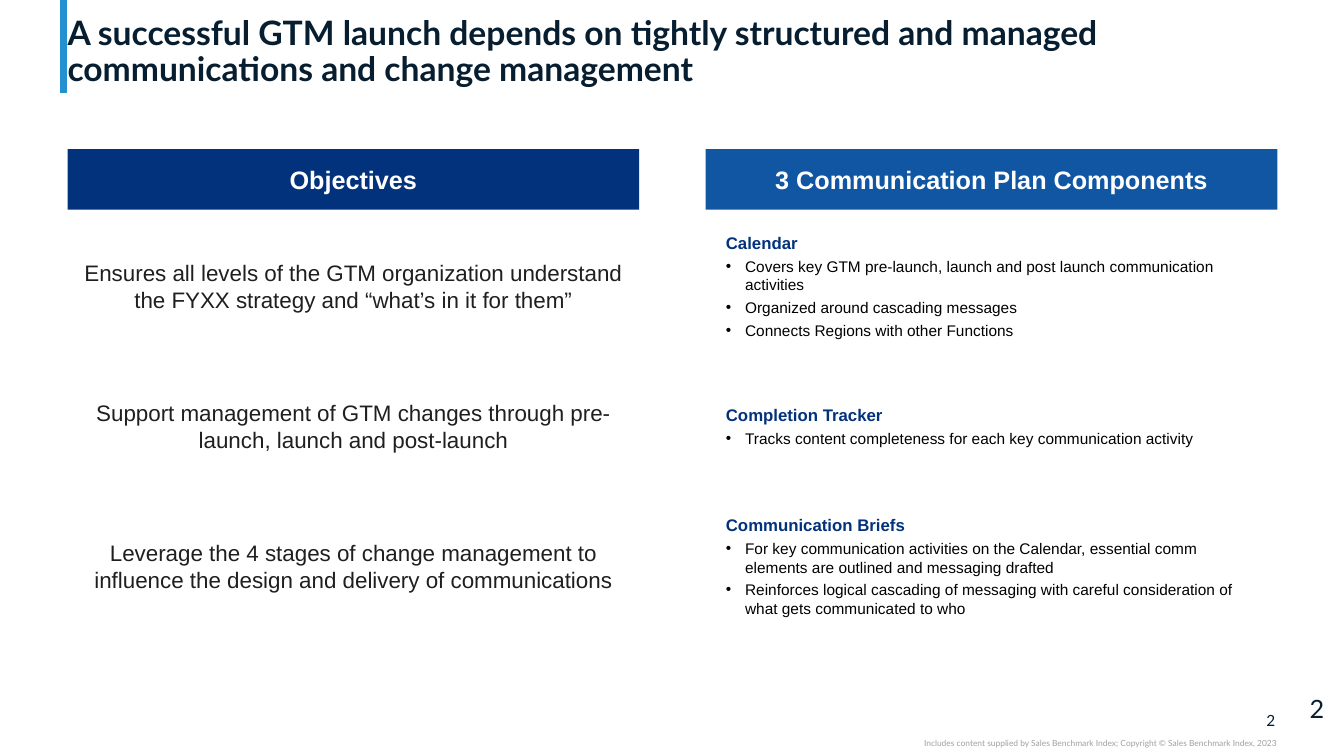
from lxml.etree import SubElement
from pptx import Presentation
from pptx.dml.color import RGBColor
from pptx.enum.shapes import MSO_CONNECTOR, MSO_SHAPE
from pptx.enum.text import MSO_ANCHOR, MSO_AUTO_SIZE, PP_ALIGN
from pptx.oxml.ns import qn
from pptx.util import Inches, Pt

NAVY, BLUE, INK, WHITE = "03327C", "1156A3", "071E31", "FFFFFF"


def style(paragraph, size, color, name="Arial", bold=False, align=PP_ALIGN.LEFT):
    paragraph.alignment = align
    paragraph.font.size = Pt(size)
    paragraph.font.name = name
    paragraph.font.bold = bold
    paragraph.font.color.rgb = RGBColor.from_string(color)


def add_box(left, top, height, fill, side_inset=0.1):
    shape = slide.shapes.add_shape(
        MSO_SHAPE.RECTANGLE, Inches(left), Inches(top), Inches(5.67), Inches(height))
    shape.shadow.inherit = False
    shape.fill.solid()
    shape.fill.fore_color.rgb = RGBColor.from_string(fill)
    shape.line.fill.background()
    frame = shape.text_frame
    frame.word_wrap = True
    frame.vertical_anchor = MSO_ANCHOR.MIDDLE
    frame.margin_left = frame.margin_right = Inches(side_inset)
    return frame


presentation = Presentation()
presentation.slide_width = Inches(13.33)
presentation.slide_height = Inches(7.5)
slide = presentation.slides.add_slide(presentation.slide_layouts[5])

accent = slide.shapes.add_connector(
    MSO_CONNECTOR.STRAIGHT, Inches(0.63), Inches(0), Inches(0.63), Inches(0.92))
accent.line.color.rgb = RGBColor.from_string("2391CF")
accent.line.width = Pt(5)
SubElement(accent.element.spPr, qn("a:effectLst"))

title = slide.shapes.title
title.left, title.top = Inches(0.67), Inches(0.04)
title.width, title.height = Inches(11.99), Inches(0.84)
title.text = ("A successful GTM launch depends on tightly structured and managed "
              "communications and change management")
frame = title.text_frame
frame.auto_size = MSO_AUTO_SIZE.NONE
frame.word_wrap = True
frame.vertical_anchor = MSO_ANCHOR.BOTTOM
frame.margin_left = frame.margin_top = frame.margin_right = frame.margin_bottom = 0
frame.paragraphs[0].line_spacing = 0.9
style(frame.paragraphs[0], 24, INK, "Lato", True)

copyright_line = ("Includes content supplied by Sales Benchmark Index; "
                  "Copyright © Sales Benchmark Index, 2023")
footers = [
    ("2", 12.32, 7.05, 0.33, 0.19, 11, INK, PP_ALIGN.RIGHT, MSO_ANCHOR.MIDDLE),
    (copyright_line, 7.5, 7.32, 5.16, 0.1, 6, "A0A0A0", PP_ALIGN.RIGHT, MSO_ANCHOR.TOP),
    ("2", 12.99, 6.93, 0.34, 0.2, 18, INK, PP_ALIGN.LEFT, MSO_ANCHOR.MIDDLE),
]
for text, left, top, width, height, size, color, align, anchor in footers:
    shape = slide.shapes.add_textbox(Inches(left), Inches(top), Inches(width), Inches(height))
    frame = shape.text_frame
    frame.text = text
    frame.word_wrap = True
    frame.vertical_anchor = anchor
    frame.margin_left = frame.margin_top = frame.margin_right = frame.margin_bottom = 0
    style(frame.paragraphs[0], size, color, "Lato", align=align)

columns = [("Objectives", 0.67, NAVY), ("3 Communication Plan Components", 7, BLUE)]
for heading, left, fill in columns:
    frame = add_box(left, 1.48, 0.6, fill)
    frame.text = heading
    style(frame.paragraphs[0], 18, WHITE, bold=True, align=PP_ALIGN.CENTER)

rows = [
    ("Ensures all levels of the GTM organization understand the FYXX strategy "
     "and “what’s in it for them”",
     "Calendar",
     ["Covers key GTM pre-launch, launch and post launch communication activities",
      "Organized around cascading messages",
      "Connects Regions with other Functions"]),
    ("Support management of GTM changes through pre-launch, launch and post-launch",
     "Completion Tracker",
     ["Tracks content completeness for each key communication activity"]),
    ("Leverage the 4 stages of change management to influence the design and "
     "delivery of communications",
     "Communication Briefs",
     ["For key communication activities on the Calendar, essential comm elements "
      "are outlined and messaging drafted",
      "Reinforces logical cascading of messaging with careful consideration of "
      "what gets communicated to who"]),
]
for index, (objective, component, details) in enumerate(rows):
    top = 2.21 + 1.39 * index
    frame = add_box(0.67, top, 1.25, WHITE)
    frame.text = objective
    style(frame.paragraphs[0], 16, "1F1F1F", align=PP_ALIGN.CENTER)

    frame = add_box(7, top, 1.25, WHITE, 0.2)
    frame.text = component
    style(frame.paragraphs[0], 12, NAVY, bold=True)
    for detail in details:
        paragraph = frame.add_paragraph()
        paragraph.text = detail
        properties = paragraph._p.get_or_add_pPr()
        properties.set("marL", str(Inches(0.19)))
        properties.set("indent", str(-Inches(0.19)))
        bullet_color = SubElement(properties, qn("a:buClr"))
        SubElement(bullet_color, qn("a:srgbClr"), val="000000")
        SubElement(properties, qn("a:buFont"), typeface="Arial")
        SubElement(properties, qn("a:buChar"), char="•")
        paragraph.space_before = Pt(3)
        style(paragraph, 11, "000000")

presentation.save("out.pptx")
